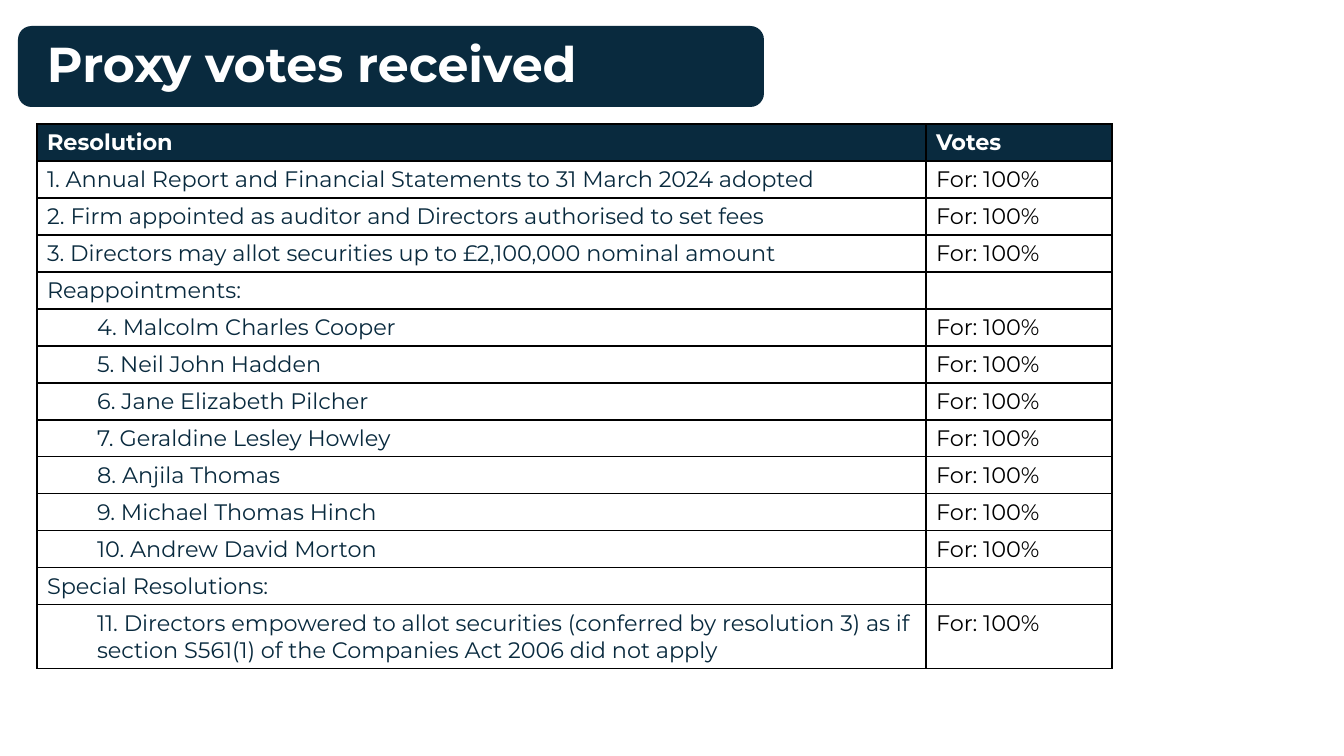
from lxml.etree import SubElement
from pptx import Presentation
from pptx.dml.color import RGBColor
from pptx.enum.shapes import MSO_SHAPE as Shape
from pptx.enum.text import MSO_ANCHOR as Anchor
from pptx.oxml import parse_xml
from pptx.oxml.ns import nsdecls, qn
from pptx.util import Pt

PX = 914400 / 100.8
FONT = "Montserrat"
COLORS = {"navy": "092A3E", "white": "FFFFFF", "black": "000000"}
VOTE = "For: 100%"
BODY_SIZE = 16


def px(value):
    return round(value * PX)


def write(text_frame, text, size=BODY_SIZE, color="navy", bold=False, indent=0, spacing=None):
    paragraph = text_frame.paragraphs[0]
    if spacing:
        paragraph.line_spacing = spacing
    if indent:
        paragraph.level = 1
        properties = paragraph._p.get_or_add_pPr()
        properties.set("marL", str(px(indent)))
        properties.set("indent", "0")
    if not text:
        SubElement(paragraph._p, qn("a:endParaRPr"), sz=str(size * 100))
        return
    run = paragraph.add_run()
    run.text = text
    run.font.name = FONT
    run.font.size = Pt(size)
    run.font.bold = bold
    run.font.color.rgb = RGBColor.from_string(COLORS[color])


presentation = Presentation()
presentation.slide_width, presentation.slide_height = px(1344), px(756)
slide = presentation.slides.add_slide(presentation.slide_layouts[6])

# Title banner
banner = slide.shapes.add_shape(Shape.ROUNDED_RECTANGLE, px(18), px(26), px(746), px(81))
banner.shadow.inherit = False
banner.fill.solid()
banner.fill.fore_color.rgb = RGBColor.from_string(COLORS["navy"])
banner.line.fill.background()

title = slide.shapes.add_textbox(px(37), px(34), px(708), px(66))
title.text_frame.word_wrap = True
title.text_frame.vertical_anchor = Anchor.MIDDLE
write(title.text_frame, "Proxy votes received", size=35, color="white", bold=True, spacing=0.9)

# Resolutions: text, vote, indent
rows = [
    ("Resolution", "Votes", 0),
    ("1. Annual Report and Financial Statements to 31 March 2024 adopted", VOTE, 0),
    ("2. Firm appointed as auditor and Directors authorised to set fees", VOTE, 0),
    ("3. Directors may allot securities up to £2,100,000 nominal amount", VOTE, 0),
    ("Reappointments:", "", 0),
    ("4. Malcolm Charles Cooper", VOTE, 50),
    ("5. Neil John Hadden", VOTE, 50),
    ("6. Jane Elizabeth Pilcher", VOTE, 50),
    ("7. Geraldine Lesley Howley", VOTE, 50),
    ("8. Anjila Thomas", VOTE, 50),
    ("9. Michael Thomas Hinch", VOTE, 50),
    ("10. Andrew David Morton", VOTE, 50),
    ("Special Resolutions:", "", 0),
    ("11. Directors empowered to allot securities (conferred by resolution 3) "
     "as if section S561(1) of the Companies Act 2006 did not apply", VOTE, 50),
]

# Votes table
row_height, last_height = 37, 64
table_height = row_height * (len(rows) - 1) + last_height
table = slide.shapes.add_table(len(rows), 2, px(37), px(124), px(1075), px(table_height)).table
table.horz_banding = False
for column, width in zip(table.columns, (889, 186)):
    column.width = px(width)
for row in table.rows:
    row.height = px(row_height)
table.rows[len(rows) - 1].height = px(last_height)

for row_index, (resolution, vote, indent) in enumerate(rows):
    header = row_index == 0
    cells = table.rows[row_index].cells
    write(cells[0].text_frame, resolution, color="white" if header else "navy",
          bold=header, indent=indent)
    write(cells[1].text_frame, vote, color="white" if header else "black", bold=header)
    for cell in cells:
        cell_properties = cell._tc.get_or_add_tcPr()
        for side in ("lnL", "lnR", "lnT", "lnB"):
            cell_properties.append(parse_xml(
                f'<a:{side} {nsdecls("a")} w="12700"><a:solidFill>'
                f'<a:srgbClr val="{COLORS["black"]}"/></a:solidFill></a:{side}>'))
        cell.fill.solid()
        cell.fill.fore_color.rgb = RGBColor.from_string(COLORS["navy" if header else "white"])

presentation.save("out.pptx")
